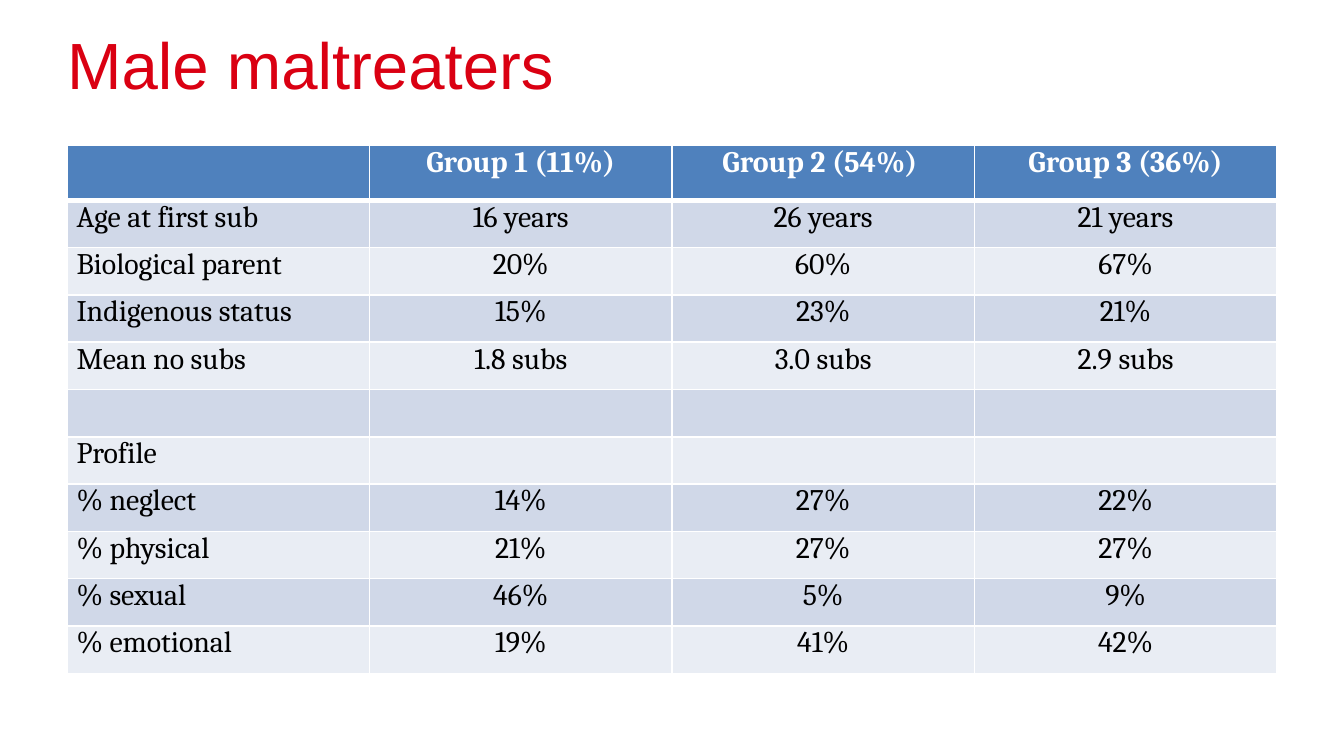
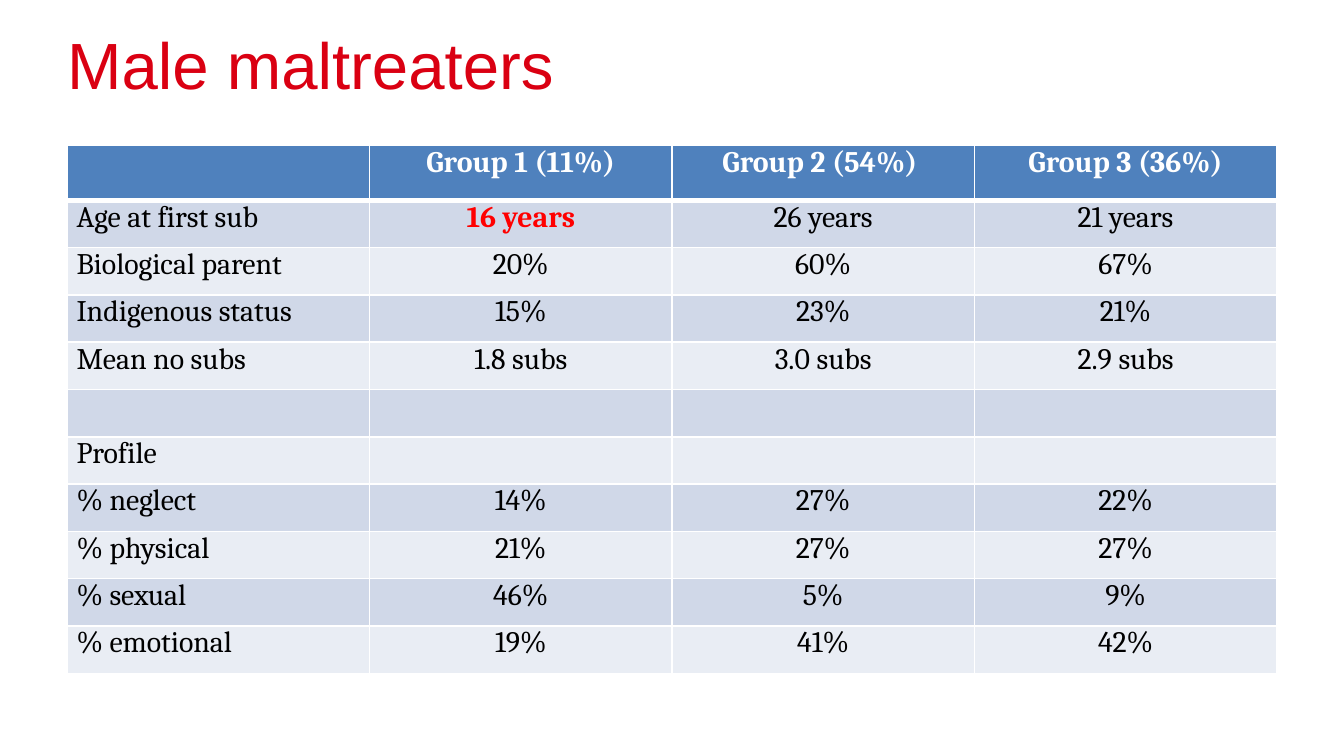
from lxml import etree
from pptx import Presentation
from pptx import util as u
from pptx.dml.color import RGBColor
from pptx.enum import text
from pptx.oxml.ns import qn

RED, HIGHLIGHT = "DA0012", "FF0000"
HEADER, BANDS = "4F81BD", ["E9EDF4", "D0D8E8"]
WHITE, BLACK = "FFFFFF", "000000"
LEFT, WIDTH = 36, 648
HEADER_HEIGHT, ROW_HEIGHT = 29.5, 25.35

ROWS = [
    ["", "Group 1 (11%)", "Group 2 (54%) ", "Group 3 (36%)"],
    ["Age at first sub", "16 years", "26 years", "21 years"],
    ["Biological parent", "20%", "60%", "67%"],
    ["Indigenous status", "15%", "23%", "21%"],
    ["Mean no subs", "1.8 subs", "3.0 subs", "2.9 subs"],
    ["", "", "", ""],
    ["Profile", "", "", ""],
    ["% neglect", "14%", "27%", "22%"],
    ["% physical", "21%", "27%", "27%"],
    ["% sexual", "46%", "5%", "9%"],
    ["% emotional", "19%", "41%", "42%"],
]


def write(frame, words, size=16, font="Cambria", color=BLACK, bold=False,
          align=text.PP_ALIGN.LEFT, spacing=None, side=0):
    frame.word_wrap = True
    frame.margin_left = frame.margin_right = u.Pt(side)
    frame.margin_top = frame.margin_bottom = 0
    para = frame.paragraphs[0]
    para.alignment = align
    if spacing:
        para.line_spacing = spacing
    if words:
        span = para.add_run()
        span.text = words
        span.font.size = u.Pt(size)
        span.font.name = font
        span.font.bold = bold
        span.font.color.rgb = RGBColor.from_string(color)


def add_borders(cell, top, bottom):
    properties = cell._tc.get_or_add_tcPr()
    for side, width in [("L", 1), ("R", 1), ("T", top), ("B", bottom)]:
        line = etree.SubElement(properties, qn("a:ln" + side), w=str(u.Pt(width)))
        fill = etree.SubElement(line, qn("a:solidFill"))
        etree.SubElement(fill, qn("a:srgbClr"), val=WHITE)


deck = Presentation()
deck.slide_width, deck.slide_height = u.Pt(720), u.Pt(405)

# The second slide repeats the first with one cell (row, column) highlighted
for highlighted in [None, (1, 1)]:
    page = deck.slides.add_slide(deck.slide_layouts[6])

    # Title
    box = page.shapes.add_textbox(u.Pt(LEFT), u.Pt(21), u.Pt(WIDTH), u.Pt(43))
    write(box.text_frame, "Male maltreaters", size=35, font="Arial", color=RED,
          spacing=0.8)

    # Table of the three groups
    height = HEADER_HEIGHT + ROW_HEIGHT * (len(ROWS) - 1)
    table = page.shapes.add_table(len(ROWS), len(ROWS[0]), u.Pt(LEFT), u.Pt(77.8),
                                  u.Pt(WIDTH), u.Pt(height)).table
    for r, values in enumerate(ROWS):
        is_header = r == 0
        table.rows[r].height = u.Pt(HEADER_HEIGHT if is_header else ROW_HEIGHT)
        for c, value in enumerate(values):
            cell = table.cell(r, c)
            marked = (r, c) == highlighted
            color = WHITE if is_header else HIGHLIGHT if marked else BLACK
            write(cell.text_frame, value, color=color, bold=is_header or marked,
                  align=text.PP_ALIGN.CENTER if c else text.PP_ALIGN.LEFT)
            cell.margin_left = cell.margin_right = u.Pt(5)
            cell.margin_top = cell.margin_bottom = 0
            add_borders(cell, top=3 if r == 1 else 1, bottom=3 if is_header else 1)
            cell.fill.solid()
            cell.fill.fore_color.rgb = RGBColor.from_string(
                HEADER if is_header else BANDS[r % 2])

deck.save("out.pptx")
